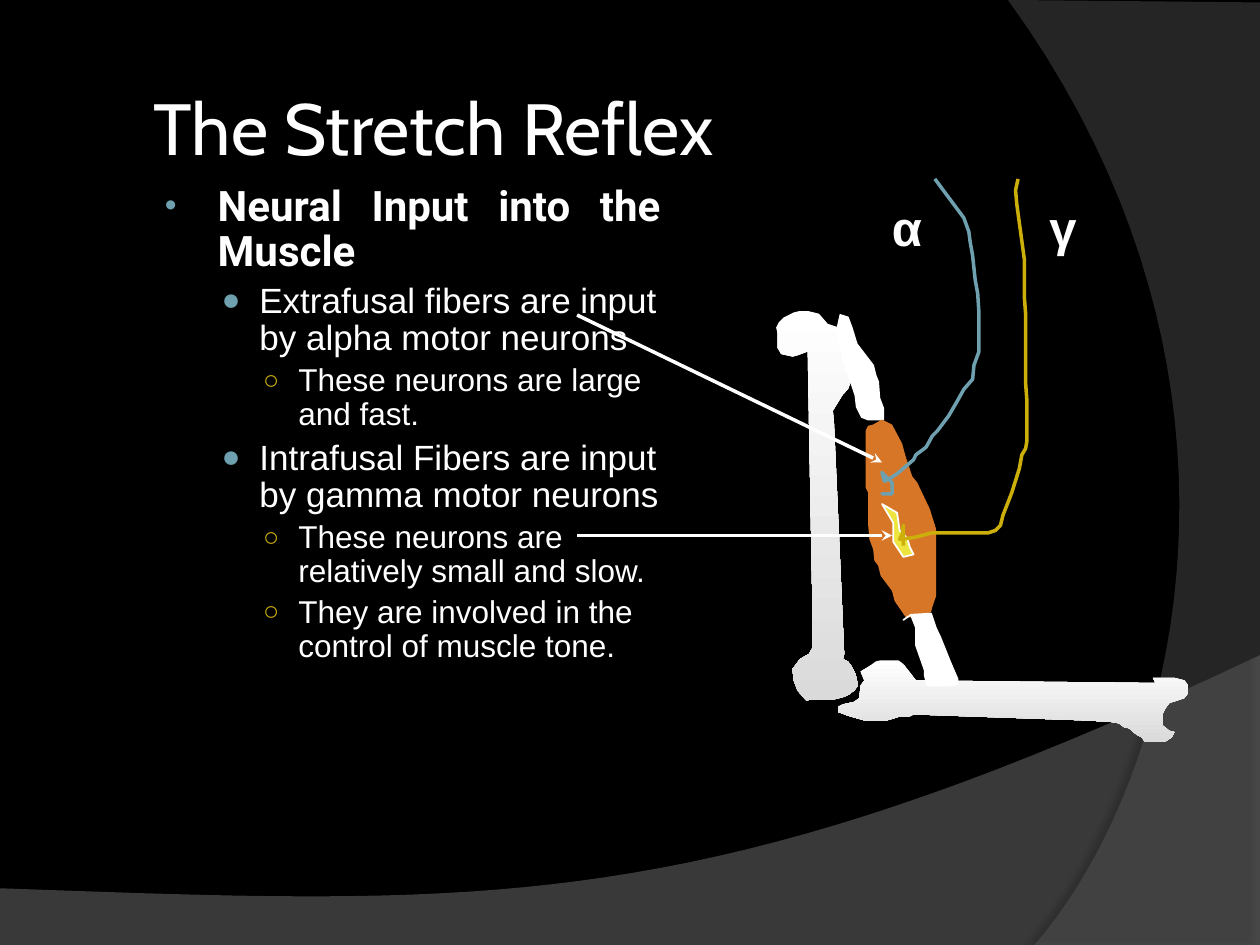
from pptx import Presentation
from pptx.dml.color import RGBColor
from pptx.enum.shapes import MSO_CONNECTOR
from pptx.enum.text import MSO_ANCHOR, MSO_AUTO_SIZE, PP_ALIGN
from pptx.oxml.ns import qn
from pptx.util import Inches, Pt
from lxml.etree import SubElement

THEME = {
    "bg": "000000", "text": "FFFFFF", "teal": "6EA0B0", "gold": "CCAF0A",
    "wave": "7F7F7F", "arc": "5E5E5E", "bone_end": "DADADA",
    "muscle": "D87627", "spindle": "EEE440",
    "title_font": "Cabin", "lead_font": "Roboto", "body_font": "Arial",
    "title_size": 41.4, "symbol_size": 28,
}

TITLE = "The Stretch Reflex"
BODY = [
    (0, "Neural Input into the Muscle"),
    (1, "Extrafusal fibers are input by alpha motor neurons"),
    (2, "These neurons are large and fast."),
    (1, "Intrafusal Fibers are input by gamma motor neurons"),
    (2, "These neurons are relatively small and slow."),
    (2, "They are involved in the control of muscle tone."),
]
# size, font, bold, left margin, hanging indent, bullet, bullet colour, bullet %
LEVELS = [
    (24, "lead_font", True, 0.46, 0.42, "•", "teal", 80),
    (20, "body_font", False, 0.79, 0.30, "●", "teal", 90),
    (18, "body_font", False, 1.10, 0.28, "○", "gold", 85),
]
SYMBOLS = [("α", 6.98, 0.45), ("γ", 8.23, 0.36)]
POINTERS = [((4.58, 2.5), (7, 3.67)), ((4.58, 4.25), (7.08, 4.25))]

# Outline points are in hundredths of an inch.
HUMERUS = [
    (641, 279), (633, 282), (629, 283), (620, 281), (617, 276), (617, 264), (616, 260),
    (618, 256), (622, 252), (630, 248), (634, 247), (642, 247), (650, 249), (657, 257),
    (666, 260), (669, 264), (669, 268), (672, 276), (672, 285), (674, 289), (676, 297),
    (676, 301), (673, 309), (669, 313), (661, 326), (662, 337), (670, 519), (669, 523),
    (673, 525), (676, 529), (679, 535), (681, 544), (678, 548), (674, 551), (670, 553),
    (662, 555), (644, 555), (640, 556), (633, 548), (630, 540), (629, 531), (635, 523),
    (642, 519), (645, 514), (645, 491),
]
UPPER_TENDON = [
    (667, 250), (673, 252), (676, 260), (680, 273), (693, 290), (695, 298), (697, 303),
    (698, 316), (701, 324), (701, 333), (689, 333), (684, 331), (680, 323), (679, 314),
    (676, 305), (669, 285), (668, 277), (665, 271), (665, 259),
]
MUSCLE = [
    (700, 333), (708, 337), (716, 352), (719, 363), (724, 378), (728, 383), (738, 404),
    (743, 420), (743, 473), (740, 482), (739, 486), (727, 490), (719, 490), (710, 477),
    (708, 469), (699, 457), (697, 449), (694, 445), (693, 436), (690, 428), (689, 416),
    (689, 391), (687, 387), (687, 342), (689, 338), (693, 337),
]
FOREARM = [
    (683, 533), (691, 528), (695, 525), (699, 524), (713, 524), (717, 527), (727, 540),
    (917, 542), (915, 538), (932, 538), (940, 540), (943, 544), (943, 550), (940, 554),
    (928, 558), (925, 562), (923, 566), (923, 576), (928, 580), (932, 581), (930, 585),
    (926, 588), (922, 589), (909, 589), (906, 585), (902, 583), (896, 578), (892, 577),
    (888, 574), (882, 573), (873, 573), (869, 572), (725, 567), (721, 569), (713, 569),
    (703, 572), (687, 572), (673, 568), (665, 565), (665, 561), (669, 559), (678, 557),
    (682, 554), (683, 544), (686, 540),
]
LOWER_TENDON = [
    (717, 492), (723, 488), (739, 487), (743, 499), (746, 505), (754, 525), (760, 539),
    (760, 543), (754, 544), (736, 544), (734, 536), (734, 532), (727, 512), (727, 498),
    (723, 488),
]
SPINDLE = [
    (700, 400), (712, 407), (714, 421), (720, 427), (722, 434), (725, 440), (717, 442),
    (709, 430), (709, 415),
]
ALPHA_NEURON = [
    (742, 142), (765, 173), (769, 184), (770, 192), (772, 203), (774, 222), (776, 233),
    (777, 249), (777, 279), (773, 290), (772, 301), (765, 309), (760, 318), (753, 330),
    (744, 342), (740, 346), (735, 355), (727, 361), (725, 365), (712, 376), (706, 380),
    (702, 382), (700, 375), (708, 383), (708, 392), (700, 392), (708, 392),
]
GAMMA_NEURON = [
    (808, 142), (806, 151), (807, 162), (813, 206), (813, 236), (814, 249), (814, 304),
    (815, 318), (815, 350), (814, 356), (811, 361), (809, 372), (803, 391), (796, 409),
    (794, 417), (790, 421), (784, 423), (739, 423), (728, 426), (723, 427), (714, 428),
    (716, 424), (717, 417), (717, 433),
]
ANATOMY = [  # points, fill, line, line width
    (HUMERUS, "bone", None, 0),
    (UPPER_TENDON, "text", "text", 1),
    (MUSCLE, "muscle", None, 0),
    (FOREARM, "bone", None, 0),
    (LOWER_TENDON, "text", "text", 1),
    (SPINDLE, "spindle", "text", 1),
]
NEURONS = [(ALPHA_NEURON, None, "teal", 2), (GAMMA_NEURON, None, "gold", 2)]


def colour(name):
    return RGBColor.from_string(THEME[name])


def curve(a, b, c, d, steps=40):
    """Points along the cubic Bezier curve from a to d."""
    return [tuple((1 - t) ** 3 * p + 3 * (1 - t) ** 2 * t * q + 3 * (1 - t) * t * t * r + t ** 3 * s
                  for p, q, r, s in zip(a, b, c, d))
            for t in (i / steps for i in range(steps + 1))]


def add_outline(slide, points, fill, line, width):
    """A closed shape when it has a fill, otherwise an open stroke."""
    pts = [(Inches(x / 100), Inches(y / 100)) for x, y in points]
    builder = slide.shapes.build_freeform(*pts[0])
    builder.add_line_segments(pts[1:], close=fill is not None)
    sp = builder.convert_to_shape()
    sp.shadow.inherit = False
    if fill is None:
        sp.fill.background()
    elif fill == "bone":
        sp.fill.gradient()
        sp.fill.gradient_angle = 270
        for stop, name, pos in zip(sp.fill.gradient_stops, ("text", "bone_end"), (0, 1)):
            stop.color.rgb = colour(name)
            stop.position = pos
    else:
        sp.fill.solid()
        sp.fill.fore_color.rgb = colour(fill)
    if line:
        sp.line.color.rgb = colour(line)
        sp.line.width = Pt(width)
    else:
        sp.line.fill.background()
    return sp


def add_backdrop(slide, points, fill, alpha, shade, dist, angle):
    """A translucent shape with a soft shadow; alpha and shade are percentages."""
    sp = add_outline(slide, points, fill, None, 0)
    spPr = sp._element.spPr
    clr = spPr.find(qn("a:solidFill")).find(qn("a:srgbClr"))
    SubElement(clr, qn("a:alpha"), val=str(alpha * 1000))
    shadow = SubElement(spPr.find(qn("a:effectLst")), qn("a:outerShdw"), blurRad=str(Pt(4)),
                        dist=str(Pt(dist)), dir=str(angle * 60000), rotWithShape="0")
    clr = SubElement(shadow, qn("a:srgbClr"), val=THEME["bg"])
    SubElement(clr, qn("a:alpha"), val=str(shade * 1000))


def add_pointer(slide, start, end):
    ends = [Inches(v) for v in start + end]
    cxn = slide.shapes.add_connector(MSO_CONNECTOR.STRAIGHT, *ends)
    cxn.line.color.rgb = colour("text")
    cxn.line.width = Pt(2)
    SubElement(cxn.line._get_or_add_ln(), qn("a:tailEnd"), type="stealth")
    SubElement(cxn._element.spPr, qn("a:effectLst"))


def add_text(slide, box, wrap=True):
    tf = slide.shapes.add_textbox(*[Inches(v) for v in box]).text_frame
    tf.word_wrap = wrap
    return tf


def style(p, size, font, bold=False):
    for r in p.runs:
        r.font.size, r.font.name, r.font.bold = Pt(size), THEME[font], bold
        r.font.color.rgb = colour("text")


def add_bullet(p, margin, hang, char, name, percent):
    pPr = p._p.get_or_add_pPr()
    pPr.set("marL", str(Inches(margin)))
    pPr.set("indent", str(-Inches(hang)))
    SubElement(SubElement(pPr, qn("a:buClr")), qn("a:srgbClr"), val=THEME[name])
    SubElement(pPr, qn("a:buSzPct"), val=str(percent * 1000))
    SubElement(pPr, qn("a:buFont"), typeface=THEME["body_font"])
    SubElement(pPr, qn("a:buChar"), char=char)


def main():
    prs = Presentation()
    prs.slide_width, prs.slide_height = Inches(10), Inches(7.5)
    slide = prs.slides.add_slide(prs.slide_layouts[6])
    slide.background.fill.solid()
    slide.background.fill.fore_color.rgb = colour("bg")

    wave = [(0, 750), (1000, 750)] + curve((1000, 520), (559, 729), (391, 719), (0, 705))
    arc = [(1000, 2), (1000, 750)] + curve((821, 750), (935, 619), (1018, 300), (800, 0))
    add_backdrop(slide, wave, "wave", 45, 35, 3.5, 270)
    add_backdrop(slide, arc, "arc", 40, 45, 4, 180)

    tf = add_text(slide, (1.17, 0.67, 8.5, 0.67))
    tf.margin_left = tf.margin_right = Inches(0.05)
    tf.vertical_anchor = MSO_ANCHOR.MIDDLE
    tf.text = TITLE
    style(tf.paragraphs[0], THEME["title_size"], "title_font")

    tf = add_text(slide, (1.17, 1.42, 4.17, 5.25))
    for i, (level, text) in enumerate(BODY):
        size, font, bold, *bullet = LEVELS[level]
        p = tf.add_paragraph() if i else tf.paragraphs[0]
        p.text = text
        p.level = level
        add_bullet(p, *bullet)
        p.alignment = PP_ALIGN.LEFT if level else PP_ALIGN.JUSTIFY
        p.line_spacing = 0.9
        if i:
            p.space_before = Pt(size * 0.2)
        style(p, size, font, bold)

    for part in ANATOMY:
        add_outline(slide, *part)
    for start, end in POINTERS:
        add_pointer(slide, start, end)
    for part in NEURONS:
        add_outline(slide, *part)
    for text, left, width in SYMBOLS:
        tf = add_text(slide, (left, 1.52, width, 0.57), wrap=False)
        tf.auto_size = MSO_AUTO_SIZE.SHAPE_TO_FIT_TEXT
        tf.text = text
        style(tf.paragraphs[0], THEME["symbol_size"], "body_font", True)
    prs.save("out.pptx")


if __name__ == "__main__":
    main()
